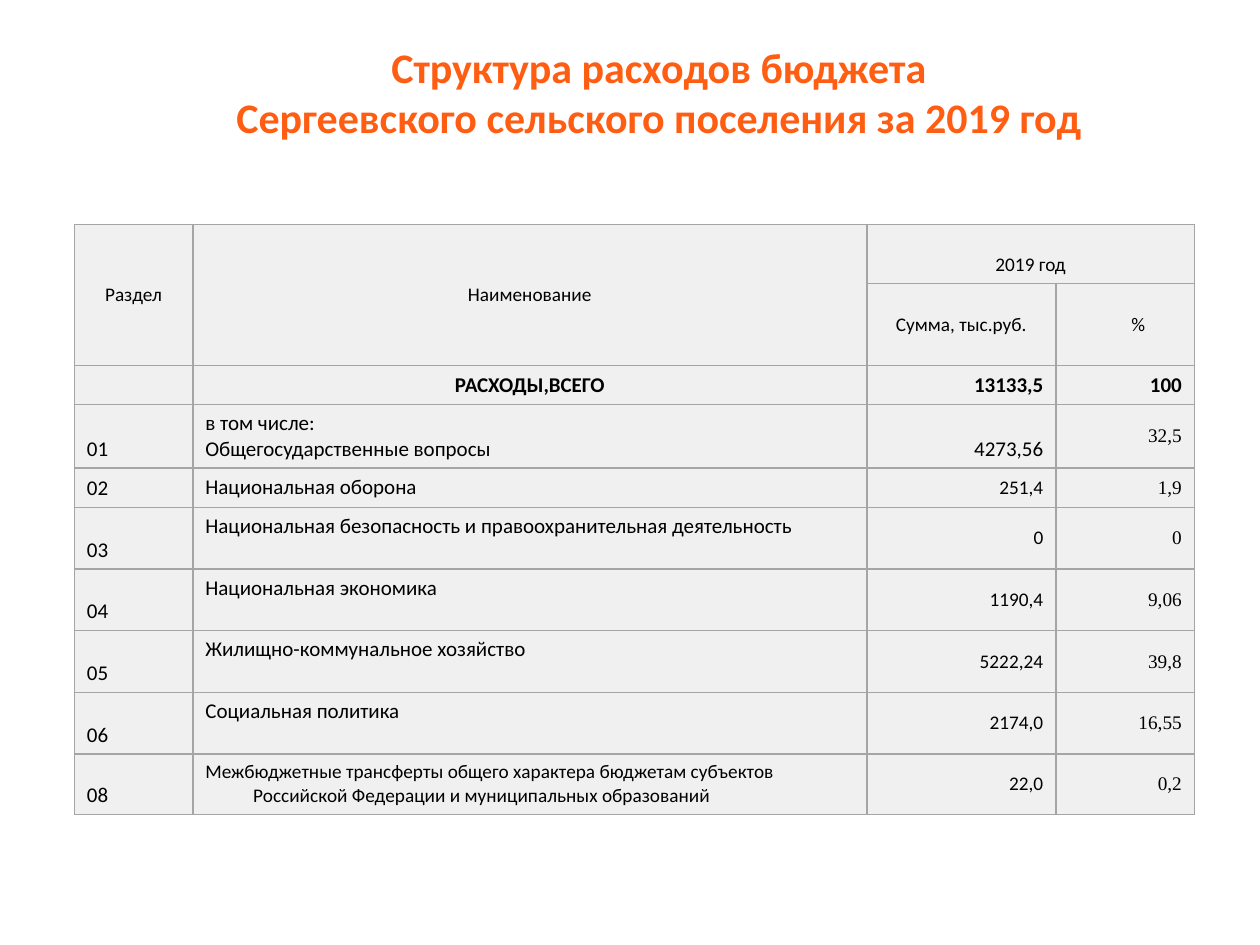
from dataclasses import dataclass

from lxml import etree
from pptx import Presentation
from pptx import util as u
from pptx.dml.color import RGBColor
from pptx.enum import text as t
from pptx.oxml.ns import qn

LEFT, MID, RIGHT = t.PP_ALIGN.LEFT, t.PP_ALIGN.CENTER, t.PP_ALIGN.RIGHT
TOP, CENTER, BASE = t.MSO_ANCHOR.TOP, t.MSO_ANCHOR.MIDDLE, t.MSO_ANCHOR.BOTTOM


@dataclass(frozen=True)
class Theme:
    """Colours, fonts and type sizes of the slide."""
    accent: str = "FF5D12"
    ink: str = "000000"
    fill: str = "F0F0F0"
    rule: str = "A5A5A5"
    sans: str = "Calibri"
    serif: str = "Times New Roman"
    head: int = 24
    body: int = 12
    small: int = 11


THEME = Theme()
COLS = [0.94, 5.35, 1.5, 1.1]
ROWS = [0.47, 0.65, 0.31, 0.5, 0.31] + [0.49] * 4 + [0.47]
ITEMS = [
    ("01", "в том числе:\nОбщегосударственные вопросы", "4273,56", "32,5"),
    ("02", "Национальная оборона", "251,4", "1,9"),
    ("03", "Национальная безопасность и правоохранительная деятельность", "0", "0"),
    ("04", "Национальная экономика", "1190,4", "9,06"),
    ("05", "Жилищно-коммунальное хозяйство", "5222,24", "39,8"),
    ("06", "Социальная политика", "2174,0", "16,55"),
    ("08", "Межбюджетные трансферты общего характера бюджетам субъектов "
           "Российской Федерации и муниципальных образований", "22,0", "0,2"),
]


def write(frame, words, size=THEME.body, font=THEME.sans, color=THEME.ink,
          bold=False, align=LEFT, indent=None, hang=0.38):
    """Fill a text frame with one paragraph per line of words."""
    for i, line in enumerate(words.split("\n")):
        par = frame.paragraphs[0] if i == 0 else frame.add_paragraph()
        par.alignment = align
        if indent is not None:
            props = par._p.get_or_add_pPr()
            props.set("marL", str(u.Inches(indent)))
            props.set("indent", str(u.Inches(-hang)))
        if not line:
            etree.SubElement(par._p, qn("a:endParaRPr"), sz=str(size * 100))
            continue
        run = par.add_run()
        run.text = line
        run.font.size, run.font.name, run.font.bold = u.Pt(size), font, bold
        run.font.color.rgb = RGBColor.from_string(color)


def frame_cell(cell):
    """Give a cell its four borders and its fill."""
    props = cell._tc.get_or_add_tcPr()
    for side in "LRTB":
        line = etree.SubElement(props, qn("a:ln" + side), w=str(u.Pt(1)))
        paint = etree.SubElement(line, qn("a:solidFill"))
        etree.SubElement(paint, qn("a:srgbClr"), val=THEME.rule)
    cell.fill.solid()
    cell.fill.fore_color.rgb = RGBColor.from_string(THEME.fill)


def put(cell, words, anchor=CENTER, indent=0.38, **style):
    """Write words into a cell at the given anchor."""
    cell.vertical_anchor = anchor
    write(cell.text_frame, words, indent=indent, **style)


def add_title(slide, box):
    """Place the two-line title in its box."""
    title = slide.shapes.title
    title.left, title.top, title.width, title.height = map(u.Inches, box)
    title.text_frame.word_wrap = True
    title.text_frame.vertical_anchor = TOP
    write(title.text_frame,
          "Структура расходов бюджета\nСергеевского сельского поселения за 2019 год",
          size=THEME.head, color=THEME.accent, bold=True, align=MID)


def add_head(grid):
    """Merge and label the two header rows."""
    for first, last in (((0, 0), (1, 0)), ((0, 1), (1, 1)), ((0, 2), (0, 3))):
        grid.cell(*first).merge(grid.cell(*last))
    label = dict(size=THEME.small, align=MID)
    put(grid.cell(0, 0), "Раздел", **label)
    put(grid.cell(0, 1), "Наименование", **label)
    put(grid.cell(0, 2), "2019 год", BASE, **label)
    put(grid.cell(1, 2), "Сумма, тыс.руб.", **label)
    put(grid.cell(1, 3), "%", indent=0.88, size=THEME.small)


def add_items(grid):
    """Fill the total row and the rows of the budget sections."""
    total = (("", LEFT), ("РАСХОДЫ,ВСЕГО", MID), ("13133,5", RIGHT), ("100", RIGHT))
    for col, (words, align) in enumerate(total):
        put(grid.cell(2, col), words, BASE, bold=True, align=align)
    for row, (code, name, total, share) in enumerate(ITEMS, 3):
        first, last = code == "01", code == "08"
        put(grid.cell(row, 0), code, BASE)
        put(grid.cell(row, 1), name, CENTER if first or last else TOP,
            size=THEME.small if last else THEME.body)
        put(grid.cell(row, 2), total, BASE if first else CENTER, align=RIGHT,
            size=THEME.body if first else THEME.small)
        put(grid.cell(row, 3), share, align=RIGHT, size=THEME.small, font=THEME.serif)


def add_grid(slide, box):
    """Place the table of expenses in its box."""
    grid = slide.shapes.add_table(len(ROWS), len(COLS), *map(u.Inches, box)).table
    grid.first_row = grid.horz_banding = False
    for col, width in zip(grid.columns, COLS):
        col.width = u.Inches(width)
    for row, height in zip(grid.rows, ROWS):
        row.height = u.Inches(height)
    for cell in grid.iter_cells():
        frame_cell(cell)
    add_head(grid)
    add_items(grid)


def main():
    """Build the slide and save it."""
    deck = Presentation()
    deck.slide_width, deck.slide_height = u.Inches(10), u.Inches(7.5)
    slide = deck.slides.add_slide(deck.slide_layouts[5])
    add_title(slide, (0.98, 0.28, 8.5, 1.25))
    add_grid(slide, (0.59, 1.78, sum(COLS), sum(ROWS)))
    deck.save("out.pptx")


if __name__ == "__main__":
    main()
